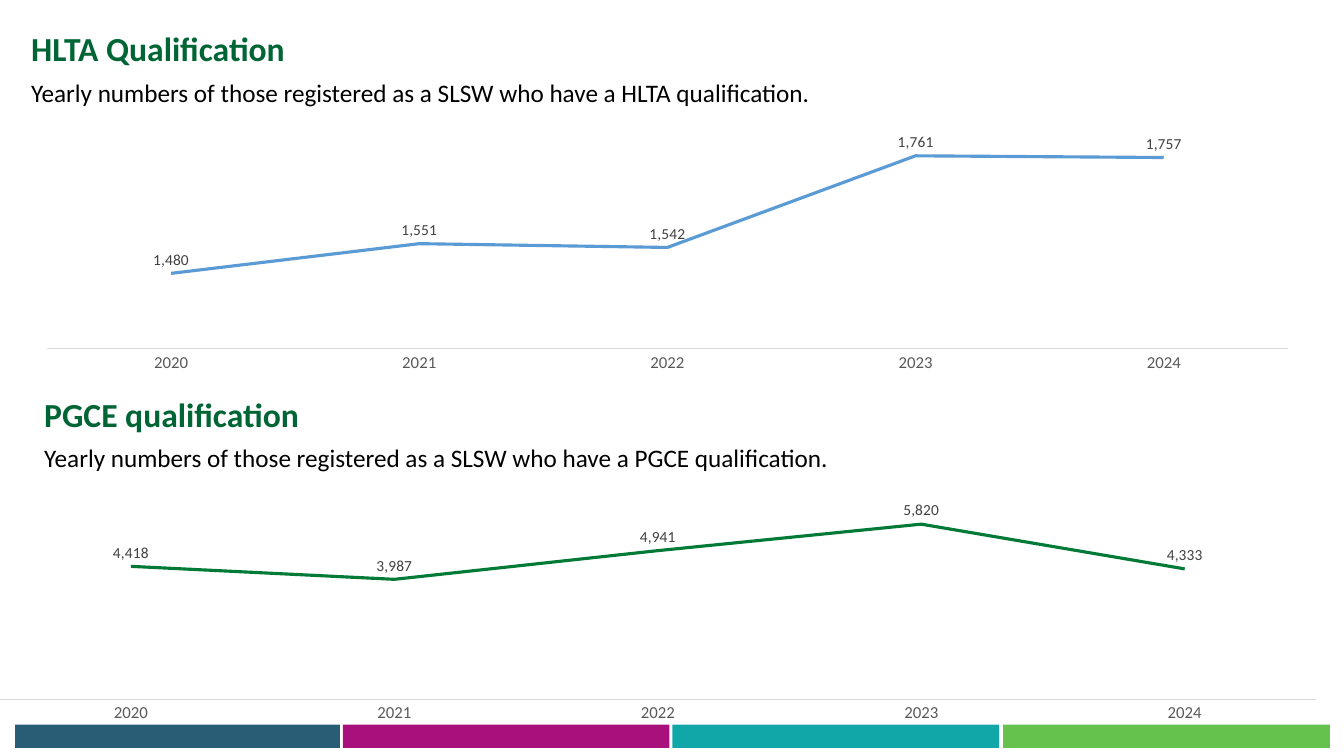
"""Build a slide with yearly HLTA and PGCE qualification line charts."""
from lxml import etree
from pptx import Presentation
from pptx.chart.data import CategoryChartData
from pptx.dml.color import RGBColor
from pptx.enum.chart import XL_CHART_TYPE, XL_LABEL_POSITION, XL_TICK_MARK
from pptx.enum.shapes import MSO_SHAPE
from pptx.enum.text import MSO_ANCHOR, MSO_AUTO_SIZE, PP_ALIGN
from pptx.oxml import parse_xml
from pptx.oxml.ns import nsdecls, qn
from pptx.util import Inches, Pt

LINE_CHART = XL_CHART_TYPE.LINE
LABEL_ABOVE = XL_LABEL_POSITION.ABOVE
NO_TICKS = XL_TICK_MARK.NONE
RECTANGLE = MSO_SHAPE.RECTANGLE
TOP = MSO_ANCHOR.TOP
LEFT = PP_ALIGN.LEFT
NO_FIT = MSO_AUTO_SIZE.NONE
GROW = MSO_AUTO_SIZE.SHAPE_TO_FIT_TEXT

FONT = "Calibri"
YEARS = ["2020", "2021", "2022", "2023", "2024"]
PLOT_AREA = {"x": 0.02, "y": 0.02, "w": 0.96, "h": 0.86}
BARS = [
    (0.15, 3.22, "295D75"),
    (3.4, 3.24, "A8117C"),
    (6.67, 3.24, "11A6A8"),
    (9.95, 3.24, "65C24C"),
]
SECTIONS = [
    {
        "heading": "HLTA Qualification",
        "heading_box": (0.21, 0.27, 3.19, 0.9),
        "caption": "Yearly numbers of those registered as a SLSW who have a HLTA qualification.",
        "caption_box": (0.21, 0.72, 8.02, 0.4),
        "chart_box": (0.21, 1.32, 12.82, 2.43),
        "values": [1480, 1551, 1542, 1761, 1757],
        "scale": (1300, 1800),
        "color": "5B9BD5",
    },
    {
        "heading": "PGCE qualification",
        "heading_box": (0.34, 3.9, 5.79, 0.56),
        "caption": "Yearly numbers of those registered as a SLSW who have a PGCE qualification.",
        "caption_box": (0.34, 4.34, 8.21, 0.4),
        "chart_box": (-0.28, 4.8, 13.61, 2.43),
        "values": [4418, 3987, 4941, 5820, 4333],
        "scale": (0, 7000),
        "color": "017A37",
    },
]


def rgb(color):
    return RGBColor.from_string(color)


def inches(box):
    return [Inches(length) for length in box]


def style_font(font, size, color, bold=False):
    font.name = FONT
    font.size = Pt(size)
    font.bold = bold
    font.color.rgb = rgb(color)


def fill_text(shape, text, box, size, color, bold, spacing, fit):
    shape.left, shape.top, shape.width, shape.height = inches(box)
    frame = shape.text_frame
    frame.word_wrap = True
    frame.auto_size = fit
    frame.vertical_anchor = TOP
    paragraph = frame.paragraphs[0]
    paragraph.alignment = LEFT
    paragraph.line_spacing = spacing
    paragraph.space_before = Pt(0)
    run = paragraph.add_run()
    run.text = text
    style_font(run.font, size, color, bold)


def set_plot_area(chart):
    plot_area = chart.element.chart.plotArea
    for old_layout in plot_area.findall(qn("c:layout")):
        plot_area.remove(old_layout)
    layout = parse_xml(f"<c:layout {nsdecls('c')}><c:manualLayout/></c:layout>")
    settings = {"layoutTarget": "inner", "xMode": "edge", "yMode": "edge", **PLOT_AREA}
    for name, value in settings.items():
        etree.SubElement(layout[0], qn(f"c:{name}")).set("val", str(value))
    plot_area.insert(0, layout)


def add_line_chart(slide, section):
    data = CategoryChartData(number_format="#,##0")
    data.categories = YEARS
    data.add_series("Series 1", section["values"])
    chart = slide.shapes.add_chart(LINE_CHART, *inches(section["chart_box"]), data).chart
    chart.has_title = False
    chart.has_legend = False
    style_font(chart.font, 10, "000000")
    set_plot_area(chart)

    years_axis = chart.category_axis
    years_axis.major_tick_mark = NO_TICKS
    years_axis.minor_tick_mark = NO_TICKS
    years_axis.format.line.color.rgb = rgb("D9D9D9")
    years_axis.format.line.width = Pt(0.75)
    style_font(years_axis.tick_labels.font, 12, "595959")

    value_axis = chart.value_axis
    value_axis.minimum_scale, value_axis.maximum_scale = section["scale"]
    value_axis.has_major_gridlines = False
    value_axis.visible = False

    plot = chart.plots[0]
    plot.vary_by_categories = False
    series = plot.series[0]
    series.smooth = False
    series.format.line.color.rgb = rgb(section["color"])
    series.format.line.width = Pt(2.25)
    labels = series.data_labels
    labels.show_value = True
    labels.number_format = "#,##0"
    labels.number_format_is_linked = False
    labels.position = LABEL_ABOVE
    style_font(labels.font, 11, "404040")


def add_bars(slide):
    for left, width, color in BARS:
        bar = slide.shapes.add_shape(RECTANGLE, *inches((left, 7.19, width, 0.23)))
        bar.shadow.inherit = False
        bar.fill.solid()
        bar.fill.fore_color.rgb = rgb(color)
        bar.line.fill.background()


def main():
    presentation = Presentation()
    presentation.slide_width, presentation.slide_height = inches((13.33, 7.5))
    slide = presentation.slides.add_slide(presentation.slide_layouts[5])
    add_bars(slide)
    for index, section in enumerate(SECTIONS):
        heading_box, caption_box = section["heading_box"], section["caption_box"]
        heading = slide.shapes.title if index == 0 else slide.shapes.add_textbox(*inches(heading_box))
        fill_text(heading, section["heading"], heading_box, 24, "006534", True, 0.9, NO_FIT)
        caption = slide.shapes.add_textbox(*inches(caption_box))
        fill_text(caption, section["caption"], caption_box, 18, "000000", False, 1.0, GROW)
        add_line_chart(slide, section)
    presentation.save("out.pptx")


if __name__ == "__main__":
    main()
